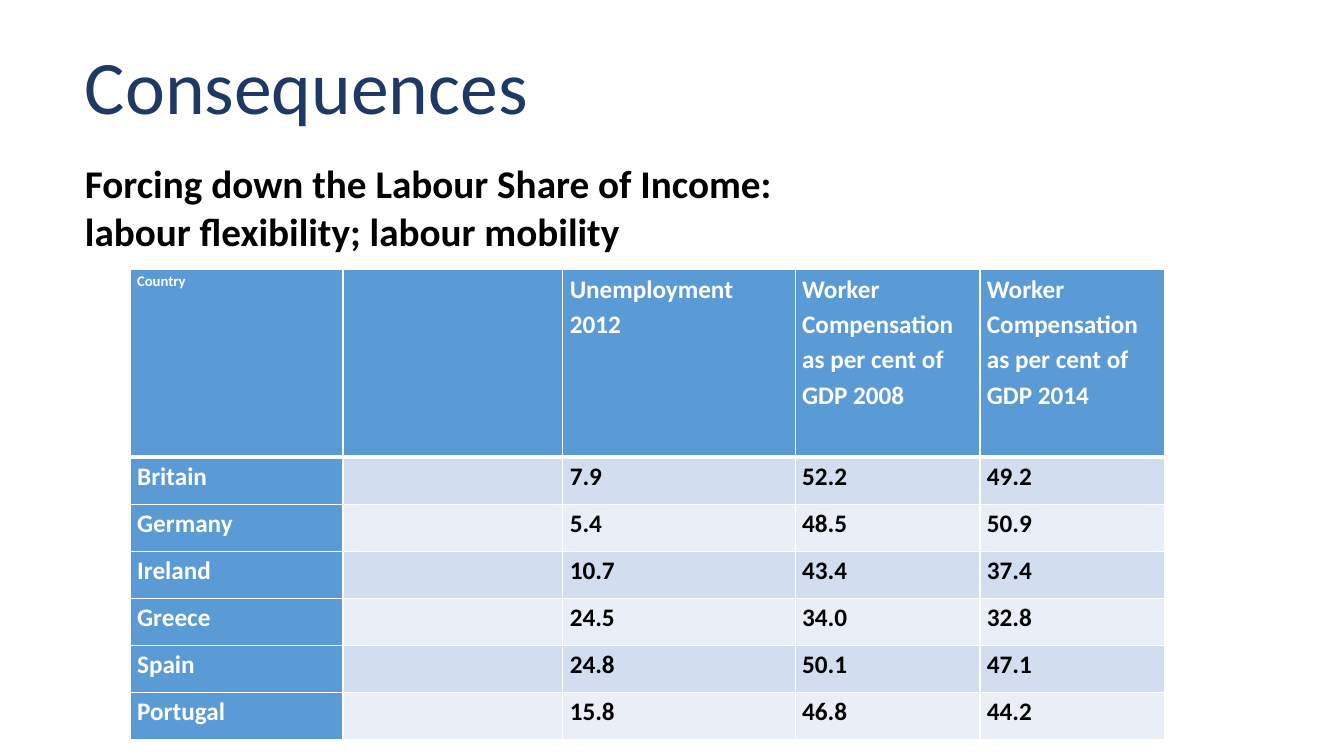
"""Build the slide on the labour share of income."""
from pptx import Presentation
from pptx import util as u
from pptx.dml import color as clr
from pptx.enum import text as t
from pptx.oxml import ns, xmlchemy as xml

HEAD = ["Country", "", "Unemployment 2012",
        "Worker Compensation as per cent of GDP 2008",
        "Worker Compensation as per cent of GDP 2014"]
ROWS = [
    ["Britain", "", "7.9", "52.2", "49.2"],
    ["Germany", "", "5.4", "48.5", "50.9"],
    ["Ireland", "", "10.7", "43.4", "37.4"],
    ["Greece", "", "24.5", "34.0", "32.8"],
    ["Spain", "", "24.8", "50.1", "47.1"],
    ["Portugal", "", "15.8", "46.8", "44.2"],
]
WIDTHS = [152, 157, 166, 132, 132]
HEAD_HIGH, ROW_HIGH = 134, 33.6


def rgb(code):
    return clr.RGBColor.from_string(code)


def write(par, words, size=18, color="000000", bold=False, font="Calibri",
          lead=1.0, after=0):
    par.alignment = t.PP_ALIGN.LEFT
    par.line_spacing = lead
    par.space_before, par.space_after = u.Pt(0), u.Pt(after)
    run = par.add_run()
    run.text = words
    run.font.name, run.font.size, run.font.bold = font, u.Pt(size), bold
    run.font.color.rgb = rgb(color)


class Deck:
    blue, dark, white, black = "5B9BD5", "203864", "FFFFFF", "000000"
    bands = ["D2DEEF", "EAEFF7"]

    def __init__(self):
        self.show = Presentation()
        self.show.slide_width, self.show.slide_height = u.Pt(960), u.Pt(540)
        self.slide = self.show.slides.add_slide(self.show.slide_layouts[1])

    def place(self, shape, left, top, width, height):
        shape.left, shape.top = u.Pt(left), u.Pt(top)
        shape.width, shape.height = u.Pt(width), u.Pt(height)
        frame = shape.text_frame
        frame.word_wrap = True
        frame.auto_size = t.MSO_AUTO_SIZE.NONE
        frame.vertical_anchor = t.MSO_ANCHOR.TOP
        return frame

    def title(self, words, *box):
        frame = self.place(self.slide.shapes.title, *box)
        write(frame.paragraphs[0], words, size=54, color=self.dark)

    def body(self, lines, *box):
        frame = self.place(self.slide.placeholders[1], *box)
        for i, line in enumerate(lines):
            par = frame.add_paragraph() if i else frame.paragraphs[0]
            write(par, line, size=28, color=self.black, bold=True)
            props = par._p.get_or_add_pPr()
            props.set("marL", "0")
            props.set("indent", "0")
            props.append(xml.OxmlElement("a:buNone"))

    def edge(self, cell, side, width):
        line = xml.OxmlElement("a:ln" + side)
        line.set("w", str(u.Pt(width)))
        fill = xml.OxmlElement("a:solidFill")
        tint = xml.OxmlElement("a:srgbClr")
        tint.set("val", self.white)
        fill.append(tint)
        line.append(fill)
        cell._tc.get_or_add_tcPr().append(line)

    def cell(self, cell, words, row, col):
        thick = {"T": 3 if row == 1 else 1, "B": 1 if row else 3}
        for side in "LRTB":
            self.edge(cell, side, thick.get(side, 1))
        main = row == 0 or col == 0
        cell.fill.solid()
        cell.fill.fore_color.rgb = rgb(self.blue if main else self.bands[(row - 1) % 2])
        cell.margin_left = cell.margin_right = u.Pt(5)
        cell.margin_top = cell.margin_bottom = u.Pt(0)
        if words:
            write(cell.text_frame.paragraphs[0], words, bold=True, lead=1.15,
                  after=12, size=10.5 if row == col == 0 else 18,
                  color=self.white if main else self.black)

    def table(self, rows, left, top):
        highs = [HEAD_HIGH] + [ROW_HIGH] * (len(rows) - 1)
        grid = self.slide.shapes.add_table(
            len(rows), len(WIDTHS), u.Pt(left), u.Pt(top),
            u.Pt(sum(WIDTHS)), u.Pt(sum(highs))).table
        grid.first_col = True
        for col, width in zip(grid.columns, WIDTHS):
            col.width = u.Pt(width)
        for r, high in enumerate(highs):
            grid.rows[r].height = u.Pt(high)
            for c, words in enumerate(rows[r]):
                self.cell(grid.cell(r, c), words, r, c)


def main():
    deck = Deck()
    deck.title("Consequences", 53.5, 24, 814, 76)
    deck.body(["Forcing down the Labour Share of Income:",
               "labour flexibility; labour mobility"], 53.5, 110.5, 814, 78)
    deck.table([HEAD] + ROWS, 93, 192.5)
    deck.show.save("out.pptx")


if __name__ == "__main__":
    main()
